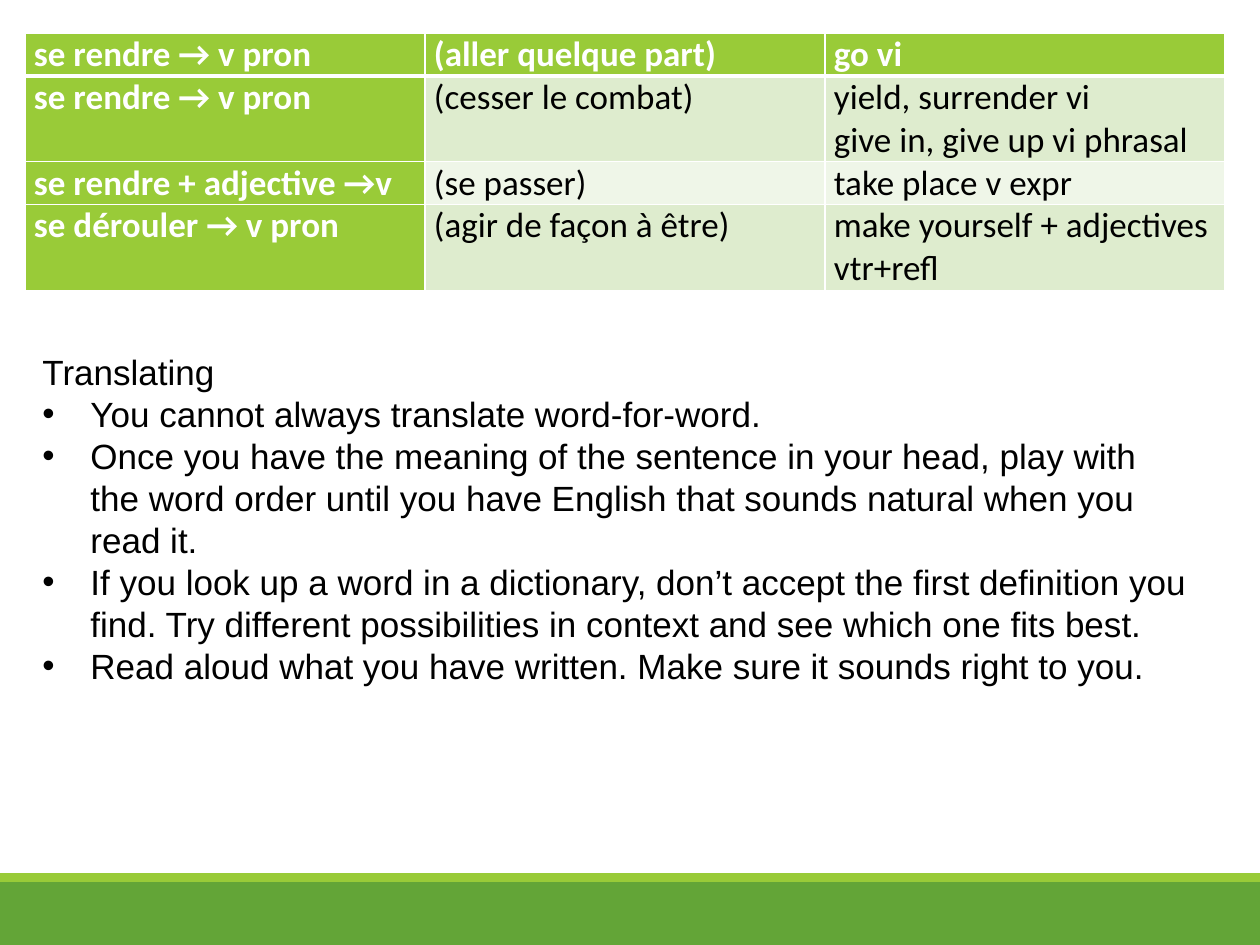
from lxml.etree import SubElement
from pptx import Presentation
from pptx.dml.color import RGBColor
from pptx.enum.shapes import MSO_SHAPE
from pptx.enum.text import MSO_AUTO_SIZE
from pptx.oxml.ns import qn
from pptx.util import Pt

WHITE = RGBColor(0xFF, 0xFF, 0xFF)
BLACK = RGBColor(0, 0, 0)
GREEN = RGBColor(0x63, 0xA5, 0x37)
LIME = RGBColor(0x99, 0xCB, 0x38)
BANDS = (RGBColor(0xEF, 0xF6, 0xE8), RGBColor(0xDE, 0xEC, 0xCE))

ENTRIES = [
    (1, ["se rendre → v pron", "(aller quelque part)", "go vi"]),
    (2, ["se rendre → v pron", "(cesser le combat)",
         "yield, surrender vi\ngive in, give up vi phrasal"]),
    (1, ["se rendre + adjective →v", "(se passer)", "take place v expr"]),
    (2, ["se dérouler → v pron", "(agir de façon à être)",
         "make yourself + adjectives vtr+refl"]),
]
HEADING = "Translating"
TIPS = [
    "You cannot always translate word-for-word.",
    "Once you have the meaning of the sentence in your head, play with the word order "
    "until you have English that sounds natural when you read it.",
    "If you look up a word in a dictionary, don’t accept the first definition you find. "
    "Try different possibilities in context and see which one fits best.",
    "Read aloud what you have written. Make sure it sounds right to you.",
]
FOOTER_BANDS = [(882, 63, GREEN), (873, 9, LIME)]

SLIDE_WIDTH, SLIDE_HEIGHT = 1260, 945
TABLE_LEFT, TABLE_TOP, COLUMN_WIDTH, LINE_HEIGHT = 25, 33, 400, 42
BULLET_INDENT = 48


def px(length):
    return round(length * 914400 / 126)


def add_run(paragraph, text, font_name, color, bold=False):
    run = paragraph.add_run()
    run.text = text
    run.font.name = font_name
    run.font.size = Pt(20)
    run.font.bold = bold
    run.font.color.rgb = color


def set_borders(cell, bottom_width):
    properties = cell._tc.get_or_add_tcPr()
    widths = {"a:lnL": 1, "a:lnR": 1, "a:lnT": 1, "a:lnB": bottom_width}
    for position, (tag, width) in enumerate(widths.items()):
        line = SubElement(properties, qn(tag), w=str(Pt(width)))
        fill = SubElement(line, qn("a:solidFill"))
        SubElement(fill, qn("a:srgbClr"), val=str(WHITE))
        properties.insert(position, line)


def add_footer(slide):
    for top, height, color in FOOTER_BANDS:
        shape = slide.shapes.add_shape(
            MSO_SHAPE.RECTANGLE, 0, px(top), px(SLIDE_WIDTH), px(height))
        shape.shadow.inherit = False
        shape.fill.solid()
        shape.fill.fore_color.rgb = color
        shape.line.fill.background()


def add_vocabulary(slide):
    columns = len(ENTRIES[0][1])
    height = sum(lines for lines, texts in ENTRIES) * LINE_HEIGHT
    table = slide.shapes.add_table(
        len(ENTRIES), columns, px(TABLE_LEFT), px(TABLE_TOP),
        px(COLUMN_WIDTH * columns), px(height)).table
    table.first_col = True
    for column in table.columns:
        column.width = px(COLUMN_WIDTH)
    for row_index, (lines, texts) in enumerate(ENTRIES):
        table.rows[row_index].height = px(lines * LINE_HEIGHT)
        for column_index, text in enumerate(texts):
            cell = table.cell(row_index, column_index)
            is_header = row_index == 0 or column_index == 0
            cell.margin_left = cell.margin_right = px(9)
            cell.margin_top = cell.margin_bottom = 0
            cell.fill.solid()
            cell.fill.fore_color.rgb = LIME if is_header else BANDS[row_index % 2]
            set_borders(cell, 3 if row_index == 0 else 1)
            paragraph = cell.text_frame.paragraphs[0]
            for line_index, line in enumerate(text.split("\n")):
                if line_index:
                    paragraph.add_line_break()
                add_run(paragraph, line, "Calibri", WHITE if is_header else BLACK, is_header)


def add_advice(slide):
    text_frame = slide.shapes.add_textbox(px(30), px(344), px(1176), px(310)).text_frame
    text_frame.word_wrap = True
    text_frame.auto_size = MSO_AUTO_SIZE.SHAPE_TO_FIT_TEXT
    add_run(text_frame.paragraphs[0], HEADING, "Arial", BLACK)
    for tip in TIPS:
        paragraph = text_frame.add_paragraph()
        properties = paragraph._p.get_or_add_pPr()
        properties.set("marL", str(px(BULLET_INDENT)))
        properties.set("indent", str(-px(BULLET_INDENT)))
        SubElement(properties, qn("a:buFont"), typeface="Arial")
        SubElement(properties, qn("a:buChar"), char="•")
        add_run(paragraph, tip, "Arial", BLACK)


def main():
    presentation = Presentation()
    presentation.slide_width = px(SLIDE_WIDTH)
    presentation.slide_height = px(SLIDE_HEIGHT)
    slide = presentation.slides.add_slide(presentation.slide_layouts[6])
    add_footer(slide)
    add_vocabulary(slide)
    add_advice(slide)
    presentation.save("out.pptx")


if __name__ == "__main__":
    main()
